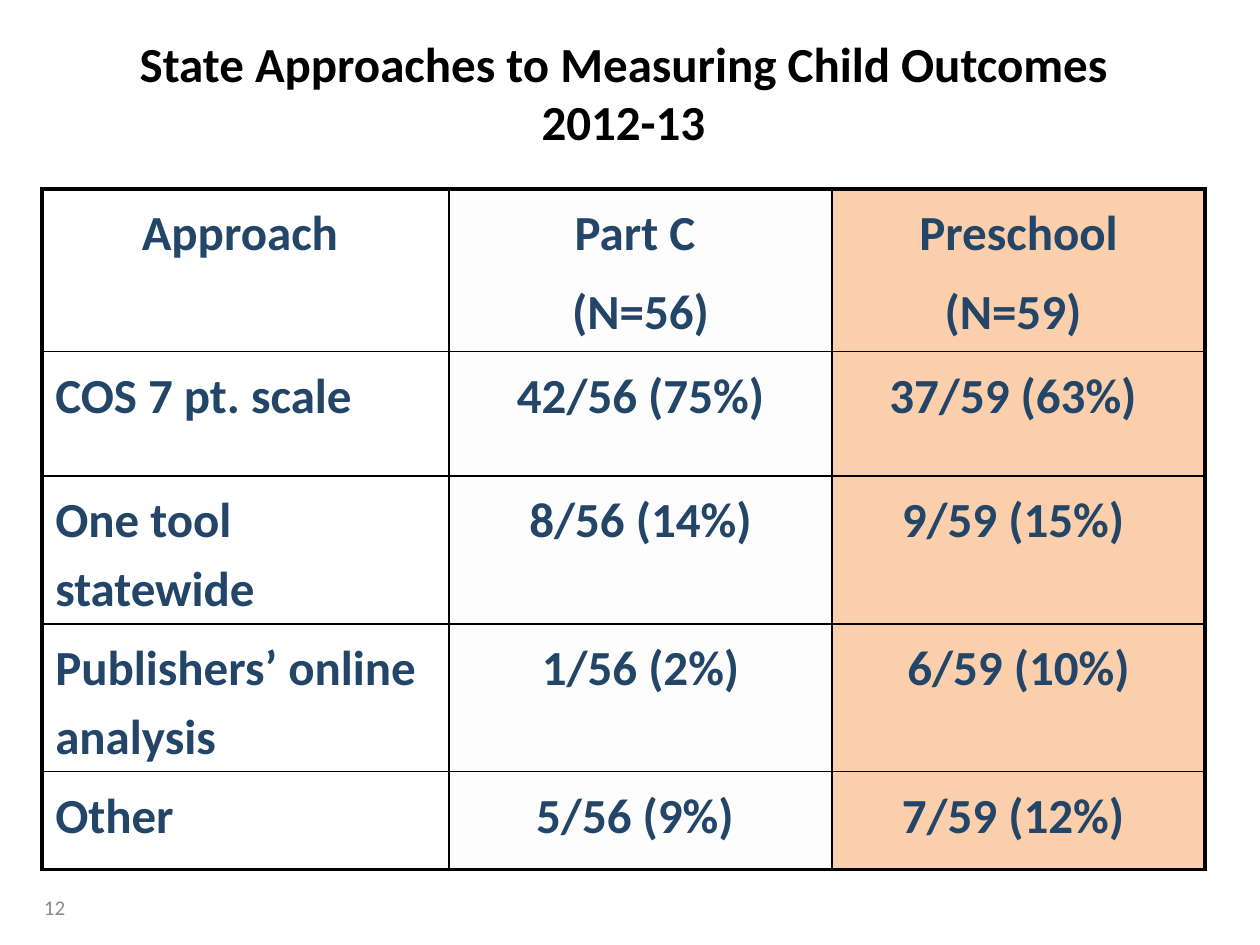
from lxml.etree import SubElement
from pptx import Presentation
from pptx.dml.color import RGBColor
from pptx.enum.text import MSO_ANCHOR as Anchor, PP_ALIGN as Align
from pptx.oxml import parse_xml
from pptx.oxml.ns import nsdecls, qn
from pptx.util import Pt

COLORS = {"title": "000000", "border": "000000", "table": "224568",
          "number": "898989", "part_c": "FCFCFA", "preschool": "F79646"}
TITLE = ["State Approaches to Measuring Child Outcomes", "2012-13"]
PAGE_NUMBER = ["12"]
ROWS = [
    (["Approach "], ["Part C ", "(N=56)"], ["Preschool", "(N=59) "]),
    (["COS 7 pt. scale"], ["42/56 (75%)"], ["37/59 (63%) "]),
    (["One tool statewide"], ["8/56 (14%)"], ["9/59 (15%) "]),
    (["Publishers’ online analysis"], ["1/56 (2%)"], ["6/59 (10%)"]),
    (["Other"], ["5/56 (9%) "], ["7/59 (12%) "]),
]
COLUMN_WIDTHS = [232.5, 219, 213]
ROW_HEIGHTS = [93, 71, 84.5, 84.5, 56]
COLUMN_FILLS = [None, ("part_c", 38), ("preschool", 45)]
LEFT, TABLE_TOP = 24, 108
OUTER_LINE, INNER_LINE = 2.25, 1


def write(frame, lines, size, color, align, bold=False, spacing=None, gap=0):
    frame.word_wrap = True
    for index, line in enumerate(lines):
        para = frame.paragraphs[0] if index == 0 else frame.add_paragraph()
        para.text = line
        para.alignment = align
        para.line_spacing = spacing
        para.space_before = Pt(gap if index else 0)
        font = para.font
        font.name, font.size, font.bold = "Calibri", Pt(size), bold
        font.color.rgb = RGBColor.from_string(COLORS[color])


def add_text(page, bounds, lines, size, color, align, bold=False):
    box = page.shapes.add_textbox(*(Pt(value) for value in bounds))
    box.text_frame.vertical_anchor = Anchor.MIDDLE
    write(box.text_frame, lines, size, color, align, bold)


def fill_cell(cell, fill):
    if fill is None:
        cell.fill.background()
        return
    name, opacity = fill
    cell.fill.solid()
    cell.fill.fore_color.rgb = RGBColor.from_string(COLORS[name])
    color = cell._tc.tcPr.find(".//" + qn("a:srgbClr"))
    SubElement(color, qn("a:alpha")).set("val", str(opacity * 1000))


def draw_borders(cell, row, column):
    outer = {"L": column == 0, "R": column == len(COLUMN_WIDTHS) - 1,
             "T": row == 0, "B": row == len(ROWS) - 1}
    for index, (side, is_outer) in enumerate(outer.items()):
        width = Pt(OUTER_LINE if is_outer else INNER_LINE)
        cell._tc.tcPr.insert(index, parse_xml(
            f'<a:ln{side} {nsdecls("a")} w="{width}"><a:solidFill>'
            f'<a:srgbClr val="{COLORS["border"]}"/></a:solidFill></a:ln{side}>'))


def add_approaches(page):
    width = sum(COLUMN_WIDTHS)
    table = page.shapes.add_table(
        len(ROWS), len(COLUMN_WIDTHS), Pt(LEFT), Pt(TABLE_TOP),
        Pt(width), Pt(sum(ROW_HEIGHTS))).table
    table.first_row = table.horz_banding = False
    for column, column_width in zip(table.columns, COLUMN_WIDTHS):
        column.width = Pt(column_width)
    for row, height in zip(table.rows, ROW_HEIGHTS):
        row.height = Pt(height)
    for row, contents in enumerate(ROWS):
        for column, lines in enumerate(contents):
            cell = table.cell(row, column)
            cell.margin_left = cell.margin_right = Pt(7.6)
            align = Align.LEFT if row and not column else Align.CENTER
            write(cell.text_frame, lines, 28, "table", align, True, 1.15, 5.8)
            fill_cell(cell, COLUMN_FILLS[column])
            draw_borders(cell, row, column)


def main():
    deck = Presentation()
    deck.slide_width, deck.slide_height = Pt(720), Pt(540)
    page = deck.slides.add_slide(deck.slide_layouts[6])
    add_text(page, (18, 504, 126, 28.8), PAGE_NUMBER, 12, "number", Align.LEFT)
    add_approaches(page)
    add_text(page, (LEFT, 6, sum(COLUMN_WIDTHS), 93), TITLE, 28, "title",
             Align.CENTER, True)
    deck.save("out.pptx")


if __name__ == "__main__":
    main()
